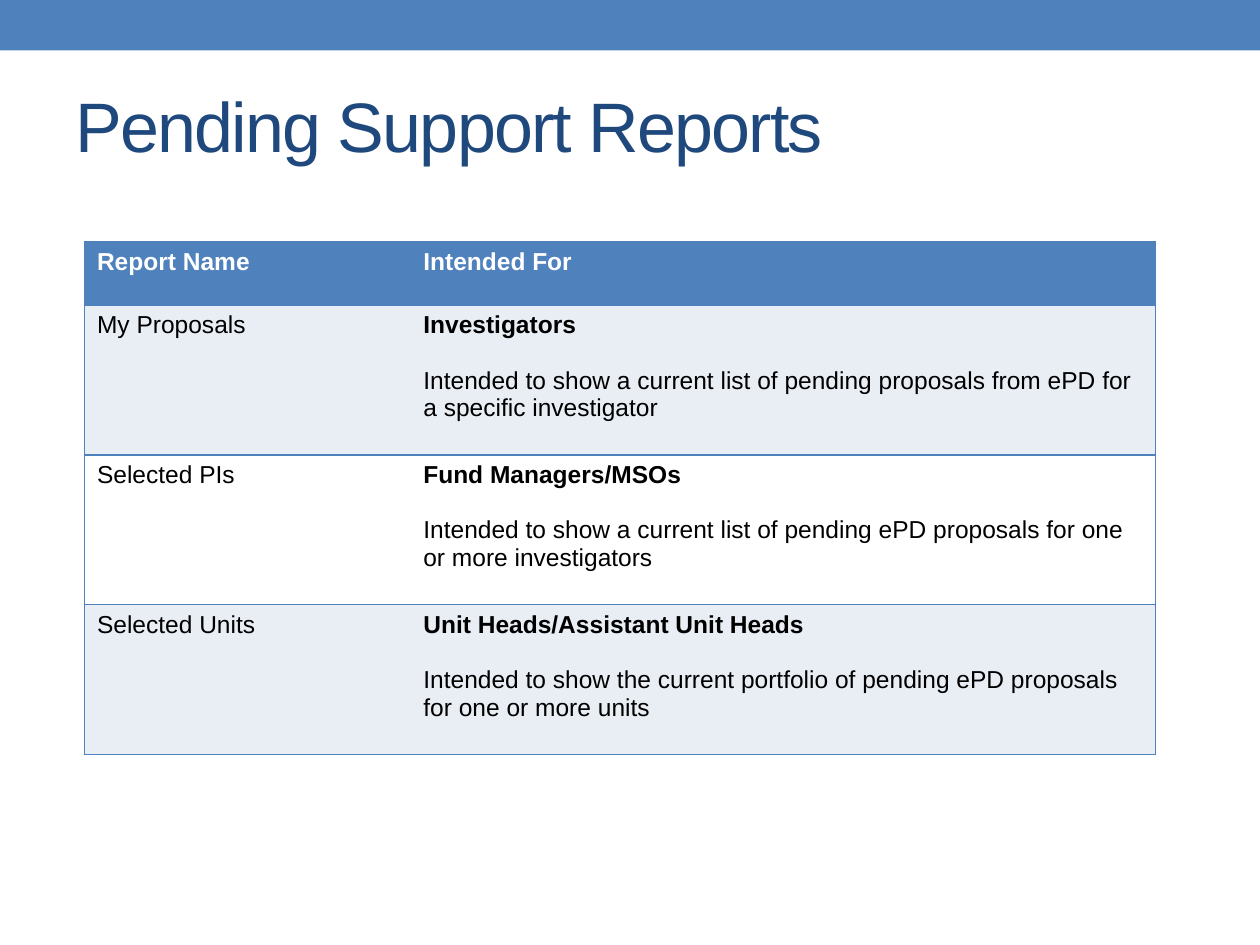
from dataclasses import dataclass

from lxml import etree
from pptx import Presentation
from pptx.dml.color import RGBColor
from pptx.enum.shapes import MSO_SHAPE
from pptx.enum.text import MSO_ANCHOR, MSO_AUTO_SIZE, PP_ALIGN
from pptx.oxml.ns import qn
from pptx.util import Inches, Pt

RECTANGLE = MSO_SHAPE.RECTANGLE
LEFT = PP_ALIGN.LEFT
MIDDLE = MSO_ANCHOR.MIDDLE
NO_AUTOFIT = MSO_AUTO_SIZE.NONE
TITLE_ONLY = 5


@dataclass(frozen=True)
class Theme:
    font: str = "Arial"
    accent: str = "4F81BD"
    title: str = "1F497D"
    band: str = "E9EDF4"
    white: str = "FFFFFF"
    text: str = "000000"
    title_size: float = 40
    table_size: float = 14
    paragraph_gap: float = 16
    border_width: float = 1


HEADERS = ["Report Name", "Intended For"]
REPORTS = [
    ("My Proposals", "Investigators",
     "Intended to show a current list of pending proposals from ePD for a specific investigator"),
    ("Selected PIs", "Fund Managers/MSOs",
     "Intended to show a current list of pending ePD proposals for one or more investigators"),
    ("Selected Units", "Unit Heads/Assistant Unit Heads",
     "Intended to show the current portfolio of pending ePD proposals for one or more units"),
]


class SlideBuilder:
    def __init__(self, slide, theme):
        self.slide = slide
        self.theme = theme

    def add_run(self, paragraph, text, size, color, bold=False):
        run = paragraph.add_run()
        run.text = text
        run.font.name = self.theme.font
        run.font.size = Pt(size)
        run.font.bold = bold
        run.font.color.rgb = RGBColor.from_string(color)
        return run

    def add_bar(self, left, top, width, height):
        bar = self.slide.shapes.add_shape(
            RECTANGLE, Inches(left), Inches(top), Inches(width), Inches(height))
        bar.shadow.inherit = False
        bar.fill.solid()
        bar.fill.fore_color.rgb = RGBColor.from_string(self.theme.accent)
        bar.line.fill.background()

    def set_title(self, text, left, top, width, height):
        title = self.slide.shapes.title
        title.left, title.top = Inches(left), Inches(top)
        title.width, title.height = Inches(width), Inches(height)
        frame = title.text_frame
        frame.auto_size = NO_AUTOFIT
        frame.vertical_anchor = MIDDLE
        paragraph = frame.paragraphs[0]
        paragraph.alignment = LEFT
        run = self.add_run(paragraph, text, self.theme.title_size, self.theme.title)
        run.font._element.set("spc", "-100")

    def set_borders(self, cell, visible_sides):
        """Draw the named sides (L, R, T, B) and clear the others."""
        properties = cell._tc.get_or_add_tcPr()
        for index, side in enumerate("LRTB"):
            line = etree.Element(qn(f"a:ln{side}"), w=str(Pt(self.theme.border_width)))
            if side in visible_sides:
                fill = etree.SubElement(line, qn("a:solidFill"))
                etree.SubElement(fill, qn("a:srgbClr"), val=self.theme.accent)
            else:
                etree.SubElement(line, qn("a:noFill"))
            properties.insert(index, line)

    def fill_cell(self, cell, lines, fill, color, visible_sides):
        """Write (text, bold) lines as spaced paragraphs in a styled cell."""
        cell.fill.solid()
        cell.fill.fore_color.rgb = RGBColor.from_string(fill)
        self.set_borders(cell, visible_sides)
        frame = cell.text_frame
        for index, (text, bold) in enumerate(lines):
            paragraph = frame.add_paragraph() if index else frame.paragraphs[0]
            if index:
                paragraph.space_before = Pt(self.theme.paragraph_gap)
            self.add_run(paragraph, text, self.theme.table_size, color, bold)

    def add_report_table(self, left, top, column_widths, header_height, row_height):
        theme = self.theme
        heights = [header_height] + [row_height] * len(REPORTS)
        table = self.slide.shapes.add_table(
            len(heights), len(column_widths), Inches(left), Inches(top),
            Inches(sum(column_widths)), Inches(sum(heights))).table
        table.first_row = table.horz_banding = False
        for column, width in zip(table.columns, column_widths):
            column.width = Inches(width)
        for row, height in zip(table.rows, heights):
            row.height = Inches(height)

        rows = [[[(header, True)] for header in HEADERS]]
        rows += [[[(name, False)], [(audience, True), (purpose, False)]]
                 for name, audience, purpose in REPORTS]
        for row_index, row in enumerate(rows):
            fill = theme.band if row_index % 2 else theme.white
            color = theme.text
            if row_index == 0:
                fill, color = theme.accent, theme.white
            for column_index, (lines, sides) in enumerate(zip(row, ("LTB", "RTB"))):
                self.fill_cell(table.cell(row_index, column_index), lines, fill, color, sides)


def main():
    presentation = Presentation()
    presentation.slide_width = Inches(10)
    presentation.slide_height = Inches(7.5)
    slide = presentation.slides.add_slide(presentation.slide_layouts[TITLE_ONLY])
    builder = SlideBuilder(slide, Theme())
    builder.add_bar(0, 0, 10, 0.4)
    builder.set_title("Pending Support Reports", 0.5, 0.53, 9, 0.91)
    builder.add_report_table(0.67, 1.92, column_widths=(2.59, 5.91),
                             header_height=0.5, row_height=1.19)
    presentation.save("out.pptx")


if __name__ == "__main__":
    main()
